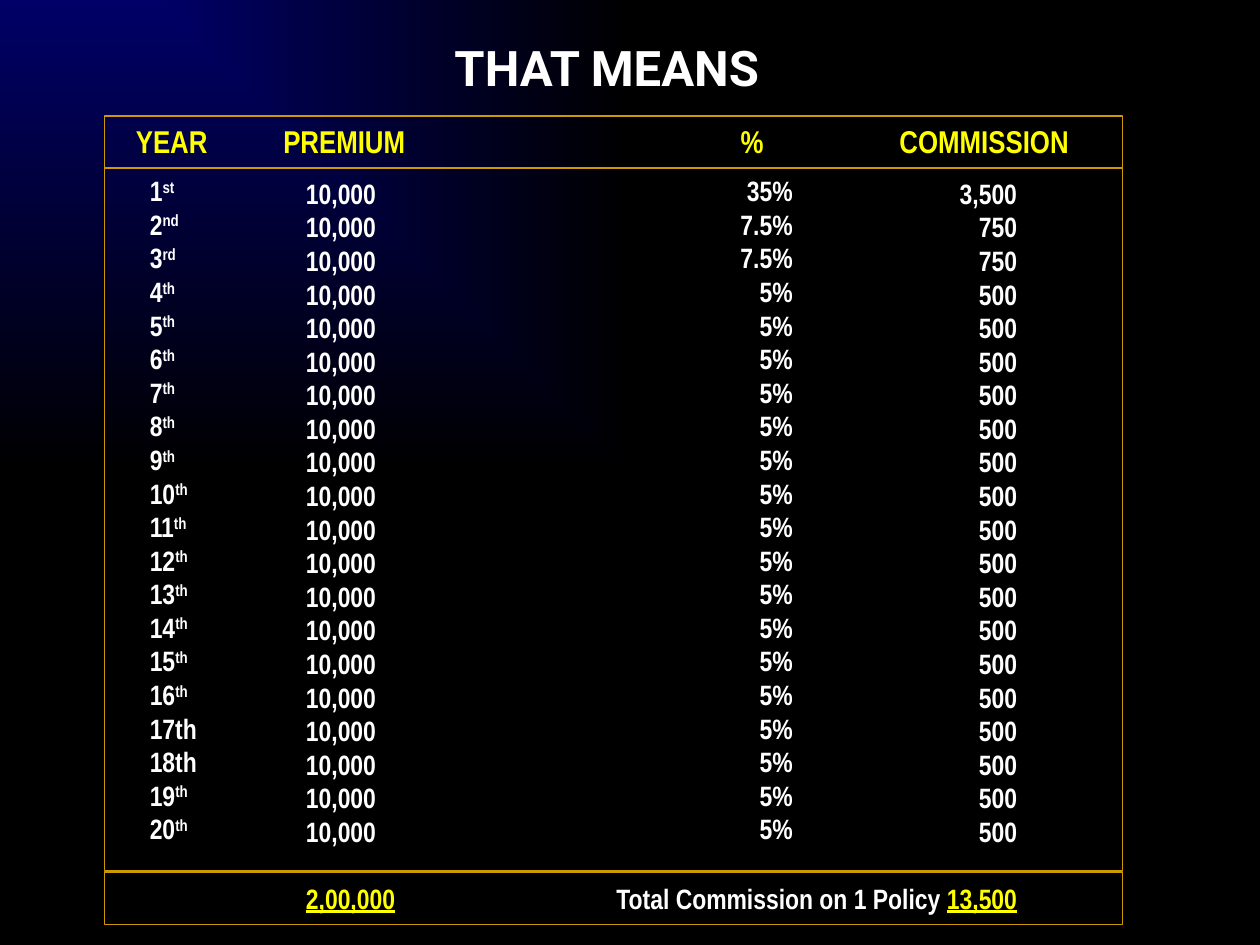
from pptx import Presentation
from pptx.dml.color import RGBColor
from pptx.enum.shapes import MSO_SHAPE as Shape
from pptx.enum.text import MSO_ANCHOR as Anchor, MSO_AUTO_SIZE as AutoSize, PP_ALIGN as Align
from pptx.oxml import parse_xml
from pptx.oxml.ns import nsdecls, qn
from pptx.util import Inches, Pt


def color(value):
    return RGBColor.from_string(value)


class SlideBuilder:
    WHITE, YELLOW, GOLD = "FFFFFF", "FFFF00", "CC9900"
    NAVY, BLACK = "000066", "000000"
    TITLE_FONT, BODY_FONT = "Roboto", "Arial Narrow"
    TITLE_SIZE, HEADING_SIZE, BODY_SIZE = 28, 18, 16

    def __init__(self, presentation):
        self.slide = presentation.slides.add_slide(presentation.slide_layouts[5])

    def background(self):
        fill = self.slide.background.fill
        fill.gradient()
        for stop, value in zip(fill.gradient_stops, (self.NAVY, self.BLACK)):
            stop.color.rgb = color(value)
        # Spread the gradient from the top left corner
        linear = self.slide.element.find(".//" + qn("a:lin"))
        corner = parse_xml(
            f'<a:path {nsdecls("a")} path="rect">'
            '<a:fillToRect r="100000" b="100000"/></a:path>')
        linear.getparent().replace(linear, corner)

    def place(self, shape, left, top, width, height):
        shape.left, shape.top = Inches(left), Inches(top)
        shape.width, shape.height = Inches(width), Inches(height)
        frame = shape.text_frame
        frame.word_wrap = False
        frame.auto_size = AutoSize.SHAPE_TO_FIT_TEXT
        frame.vertical_anchor = Anchor.TOP
        return frame

    def run(self, paragraph, text, size, value, font=BODY_FONT,
            underline=None, superscript=False):
        run = paragraph.add_run()
        run.text = text
        run.font.name = font
        run.font.size = Pt(size)
        run.font.bold = True
        run.font.underline = underline
        run.font.color.rgb = color(value)
        if superscript:
            run.font._element.set("baseline", "30000")

    def title(self, text, *box):
        paragraph = self.place(self.slide.shapes.title, *box).paragraphs[0]
        paragraph.alignment = Align.CENTER
        self.run(paragraph, text, self.TITLE_SIZE, self.WHITE, self.TITLE_FONT)

    def heading(self, text, left, width):
        shape = self.slide.shapes.add_textbox(0, 0, 0, 0)
        frame = self.place(shape, left, 0.92, width, 0.4)
        self.run(frame.paragraphs[0], text, self.HEADING_SIZE, self.YELLOW)

    def column(self, rows, box, align=Align.LEFT, total=None, label=""):
        """Each row is a pair: the text and its superscript."""
        frame = self.place(self.slide.shapes.add_textbox(0, 0, 0, 0), *box)
        for index, (text, suffix) in enumerate(rows):
            paragraph = frame.paragraphs[0] if index == 0 else frame.add_paragraph()
            paragraph.alignment = align
            self.run(paragraph, text, self.BODY_SIZE, self.WHITE)
            if suffix:
                self.run(paragraph, suffix, self.BODY_SIZE, self.WHITE, superscript=True)
        if total:
            paragraph = frame.add_paragraph()
            paragraph.alignment = align
            paragraph.space_before = Pt(1.2 * self.BODY_SIZE)
            if label:
                self.run(paragraph, label, self.BODY_SIZE, self.WHITE)
            self.run(paragraph, total, self.BODY_SIZE, self.YELLOW, underline=True)

    def band(self, top, height):
        shape = self.slide.shapes.add_shape(
            Shape.RECTANGLE, Inches(0.83), Inches(top), Inches(8.08), Inches(height))
        shape.shadow.inherit = False
        shape.fill.background()
        shape.line.color.rgb = color(self.GOLD)
        shape.line.width = Pt(0.75)


def year_label(year):
    if year in (17, 18):
        return f"{year}th", ""
    return str(year), {1: "st", 2: "nd", 3: "rd"}.get(year, "th")


def plain(values):
    return [(value, "") for value in values]


def main():
    presentation = Presentation()
    presentation.slide_width, presentation.slide_height = Inches(10), Inches(7.5)
    builder = SlideBuilder(presentation)
    builder.background()
    builder.title("THAT MEANS", 3.44, 0.25, 2.75, 0.57)

    # Column headings
    for text, left, width in (("YEAR", 0.98, 0.77), ("PREMIUM", 2.15, 1.17),
                              ("%", 5.78, 0.38), ("COMMISSION", 7.04, 1.55)):
        builder.heading(text, left, width)

    # Twenty years of figures, with totals
    years = [year_label(year) for year in range(1, 21)]
    premiums = plain(["10,000"] * 20)
    rates = plain(["35%"] + ["7.5%"] * 2 + ["5%"] * 17)
    commissions = plain(["3,500"] + ["750"] * 2 + ["500"] * 17)
    builder.column(years, (1.09, 1.33, 0.62, 5.45))
    builder.column(premiums, (2.33, 1.35, 0.91, 5.98), total="2,00,000")
    builder.column(rates, (5.73, 1.33, 0.66, 5.45), Align.RIGHT)
    builder.column(commissions, (4.78, 1.35, 3.39, 5.98), Align.RIGHT,
                   total="13,500", label="Total Commission on 1 Policy ")

    # Frames for the heading, body and total rows
    for top, height in ((0.92, 0.42), (1.33, 5.58), (6.92, 0.42)):
        builder.band(top, height)

    presentation.save("out.pptx")


if __name__ == "__main__":
    main()
